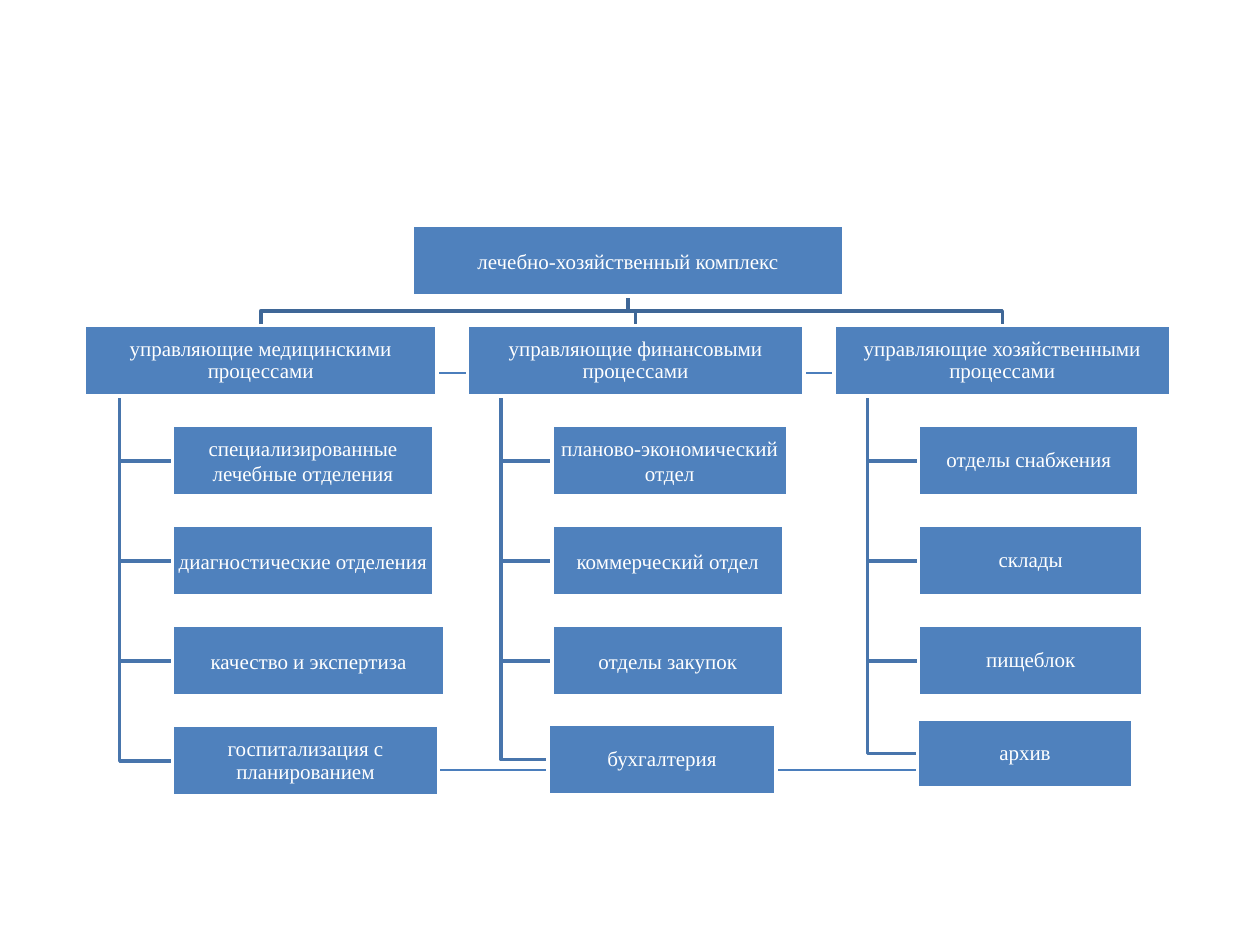
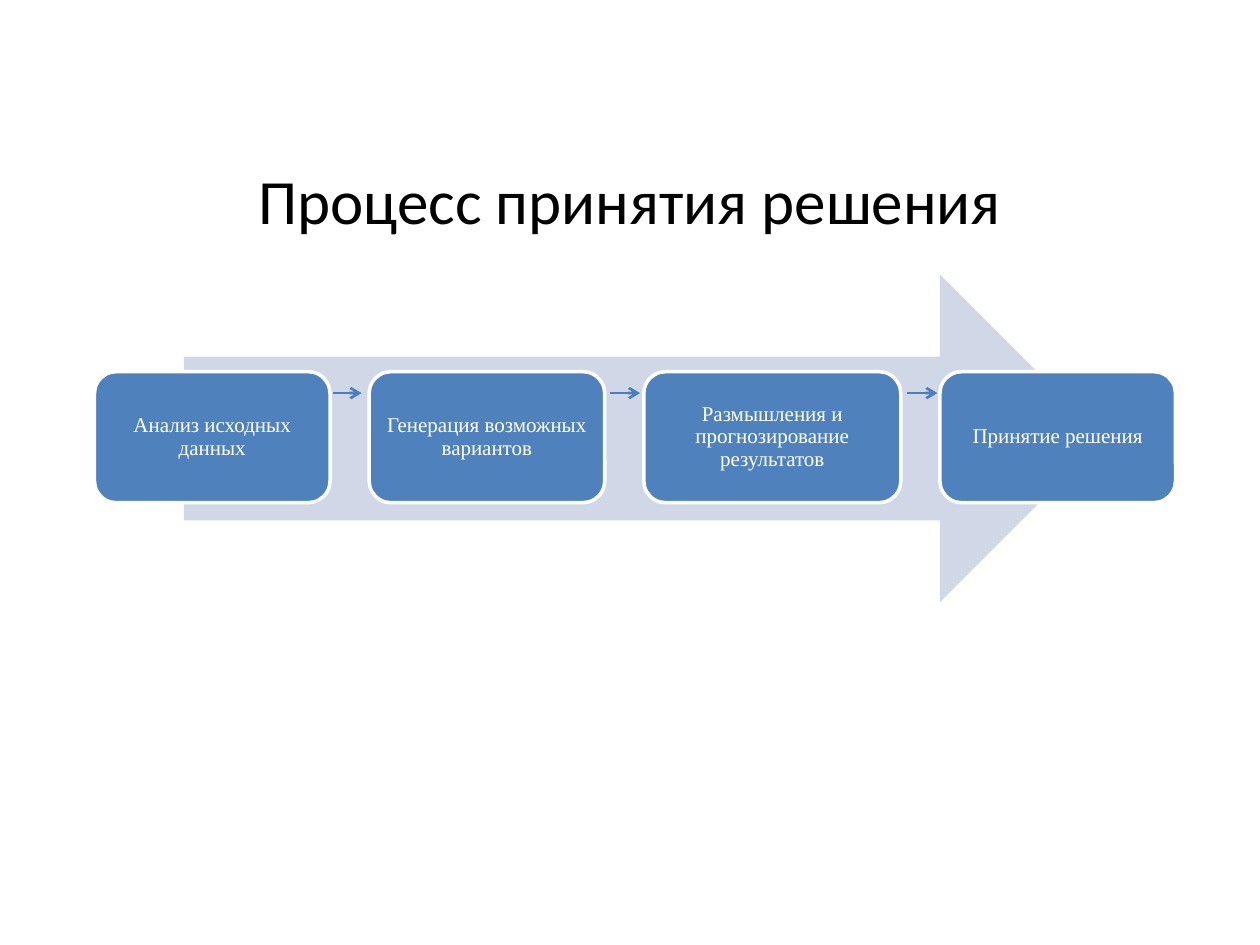
from dataclasses import dataclass
from typing import Any

from lxml.etree import SubElement
from pptx import Presentation
from pptx.dml.color import RGBColor
from pptx.enum.shapes import MSO_CONNECTOR, MSO_SHAPE
from pptx.enum.text import MSO_ANCHOR, MSO_AUTO_SIZE, PP_ALIGN
from pptx.oxml.ns import qn
from pptx.util import Inches, Pt

prs = Presentation()
prs.slide_width, prs.slide_height = Inches(10), Inches(7.5)
COL, ROW = prs.slide_width / 100, prs.slide_height / 75

BLUE, WHITE, BLACK, PALE = "4F81BD", "FFFFFF", "000000", "D0D8E8"
LINK, BRANCH, TRUNK = "4B7EBC", "4875AC", "3F6797"
BOX_H, LEVEL_TOP, LEVEL_STEP = 5.6, 17.9, 7.94
TIGHT = 0.9
NODE_FONT = {"name": "Times New Roman", "size": Pt(12)}
TITLE_FONT = {"name": "Calibri", "size": Pt(36)}


@dataclass(frozen=True)
class Node:
    text: str
    left: float
    top: float
    width: float
    height: float = BOX_H
    spacing: float = TIGHT

    @property
    def center(self) -> float:
        return self.left + self.width / 2

    @property
    def middle(self) -> float:
        return self.top + self.height / 2

    @property
    def bottom(self) -> float:
        return self.top + self.height


@dataclass(frozen=True)
class Department:
    head: Node
    units: tuple[Node, ...]


def level(n: int) -> float:
    return LEVEL_TOP + n * LEVEL_STEP


def rgb(value: str) -> RGBColor:
    return RGBColor.from_string(value)


def assign(target: Any, values: dict[str, Any]) -> None:
    for name, value in values.items():
        setattr(target, name, value)


def paint(sp: Any, fill: str | None, line: str | None) -> None:
    sp.shadow.inherit = False
    if fill:
        sp.fill.solid()
        sp.fill.fore_color.rgb = rgb(fill)
    else:
        sp.fill.background()
    if line:
        sp.line.color.rgb = rgb(line)
        sp.line.width = Pt(2)
    else:
        sp.line.fill.background()


def write(tf: Any, text: str, font: dict[str, Any], color: str,
          frame: dict[str, Any], spacing: float = 1.0) -> None:
    assign(tf, {"word_wrap": True, "auto_size": MSO_AUTO_SIZE.NONE} | frame)
    p = tf.paragraphs[0]
    assign(p, {"alignment": PP_ALIGN.CENTER, "line_spacing": spacing})
    r = p.add_run()
    r.text = text
    assign(r.font, font)
    r.font.color.rgb = rgb(color)


def add_shape(s: Any, kind: MSO_SHAPE, left: float, top: float,
              width: float, height: float) -> Any:
    return s.shapes.add_shape(kind, round(left * COL), round(top * ROW),
                              round(width * COL), round(height * ROW))


def add_node(s: Any, node: Node, kind: MSO_SHAPE, inset: float) -> None:
    sp = add_shape(s, kind, node.left, node.top, node.width, node.height)
    paint(sp, BLUE, WHITE)
    frame = {f"margin_{side}": Inches(inset)
             for side in ("left", "top", "right", "bottom")}
    frame["vertical_anchor"] = MSO_ANCHOR.MIDDLE
    write(sp.text_frame, node.text, NODE_FONT, WHITE, frame, node.spacing)


def add_path(s: Any, points: list[tuple[float, float]], color: str) -> None:
    start, *rest = [(round(x * COL), round(y * ROW)) for x, y in points]
    builder = s.shapes.build_freeform(*start)
    builder.add_line_segments(rest, close=False)
    paint(builder.convert_to_shape(), None, color)


def add_link(s: Any, x1: float, x2: float, y: float, arrow: bool = False) -> None:
    sp = s.shapes.add_connector(MSO_CONNECTOR.STRAIGHT, round(x1 * COL), round(y * ROW),
                                round(x2 * COL), round(y * ROW))
    sp.line.color.rgb = rgb(LINK)
    sp.line.width = Pt(1.5)
    if arrow:
        SubElement(sp.line._get_or_add_ln(), qn("a:tailEnd"), type="arrow")
    SubElement(sp._element.spPr, qn("a:effectLst"))


ROOT = Node("лечебно-хозяйственный комплекс", 32.7, level(0), 34.3, spacing=1)
DEPARTMENTS = (
    Department(Node("управляющие медицинскими процессами", 6.7, level(1), 28), (
        Node("специализированные лечебные отделения", 13.7, level(2), 20.7, spacing=1),
        Node("диагностические отделения", 13.7, level(3), 20.7, spacing=1),
        Node("качество и экспертиза", 13.7, level(4), 21.6, spacing=1),
        Node("госпитализация с планированием", 13.7, level(5), 21.1),
    )),
    Department(Node("управляющие финансовыми процессами", 37.1, level(1), 26.7), (
        Node("планово-экономический отдел", 43.8, level(2), 18.7, spacing=1),
        Node("коммерческий отдел", 43.8, level(3), 18.4, spacing=1),
        Node("отделы закупок", 43.8, level(4), 18.4, spacing=1),
        Node("бухгалтерия", 43.5, 57.5, 18.1),
    )),
    Department(Node("управляющие хозяйственными процессами", 66.2, level(1), 26.7), (
        Node("отделы снабжения", 72.9, level(2), 17.5),
        Node("склады", 72.9, level(3), 17.8),
        Node("пищеблок", 72.9, level(4), 17.8),
        Node("архив", 72.8, 57.1, 17.1, 5.4),
    )),
)
LINKS = ((31.9, 46.9, 61.1), (61, 76, 61.1), (58.7, 73.6, 29.6), (29.5, 44.5, 29.6))

STEP_GAP, STEP_TOP, STEP_H = 3.1, 29.5, 10.4
STEPS = (("Анализ исходных данных", 18.7), ("Генерация возможных вариантов", 18.7),
         ("Размышления и прогнозирование результатов", 20.4), ("Принятие решения", 18.7))
ARROWS = ((26.4, 28.7), (48.4, 50.8), (72, 74.4))


def build_structure() -> None:
    s = prs.slides.add_slide(prs.slide_layouts[6])
    for link in LINKS:
        add_link(s, *link)
    for dept in reversed(DEPARTMENTS):
        head = dept.head
        spine = head.left + head.width / 10
        for unit in reversed(dept.units):
            add_path(s, [(spine, head.bottom), (spine, unit.middle),
                         (unit.left, unit.middle)], BRANCH)
        bus = (ROOT.bottom + head.top) / 2
        add_path(s, [(ROOT.center, ROOT.bottom), (ROOT.center, bus),
                     (head.center, bus), (head.center, head.top)], TRUNK)
    add_node(s, ROOT, MSO_SHAPE.RECTANGLE, 0.01)
    for dept in DEPARTMENTS:
        for node in (dept.head, *dept.units):
            add_node(s, node, MSO_SHAPE.RECTANGLE, 0.01)


def build_process() -> None:
    s = prs.slides.add_slide(prs.slide_layouts[5])
    title = s.shapes.title
    assign(title, {"left": round(6.9 * COL), "top": round(12.3 * ROW),
                   "width": round(86.2 * COL), "height": round(6.2 * ROW)})
    write(title.text_frame, "Процесс принятия решения", TITLE_FONT, BLACK,
          {"vertical_anchor": MSO_ANCHOR.TOP})
    paint(add_shape(s, MSO_SHAPE.RIGHT_ARROW, 14.6, 21.8, 73, 26), PALE, None)
    left = 7.5
    for text, width in STEPS:
        add_node(s, Node(text, left, STEP_TOP, width, STEP_H),
                 MSO_SHAPE.ROUNDED_RECTANGLE, 0.05)
        left += width + STEP_GAP
    for x1, x2 in ARROWS:
        add_link(s, x1, x2, 31.2, arrow=True)


def main() -> None:
    build_structure()
    build_process()
    prs.save("out.pptx")


if __name__ == "__main__":
    main()
